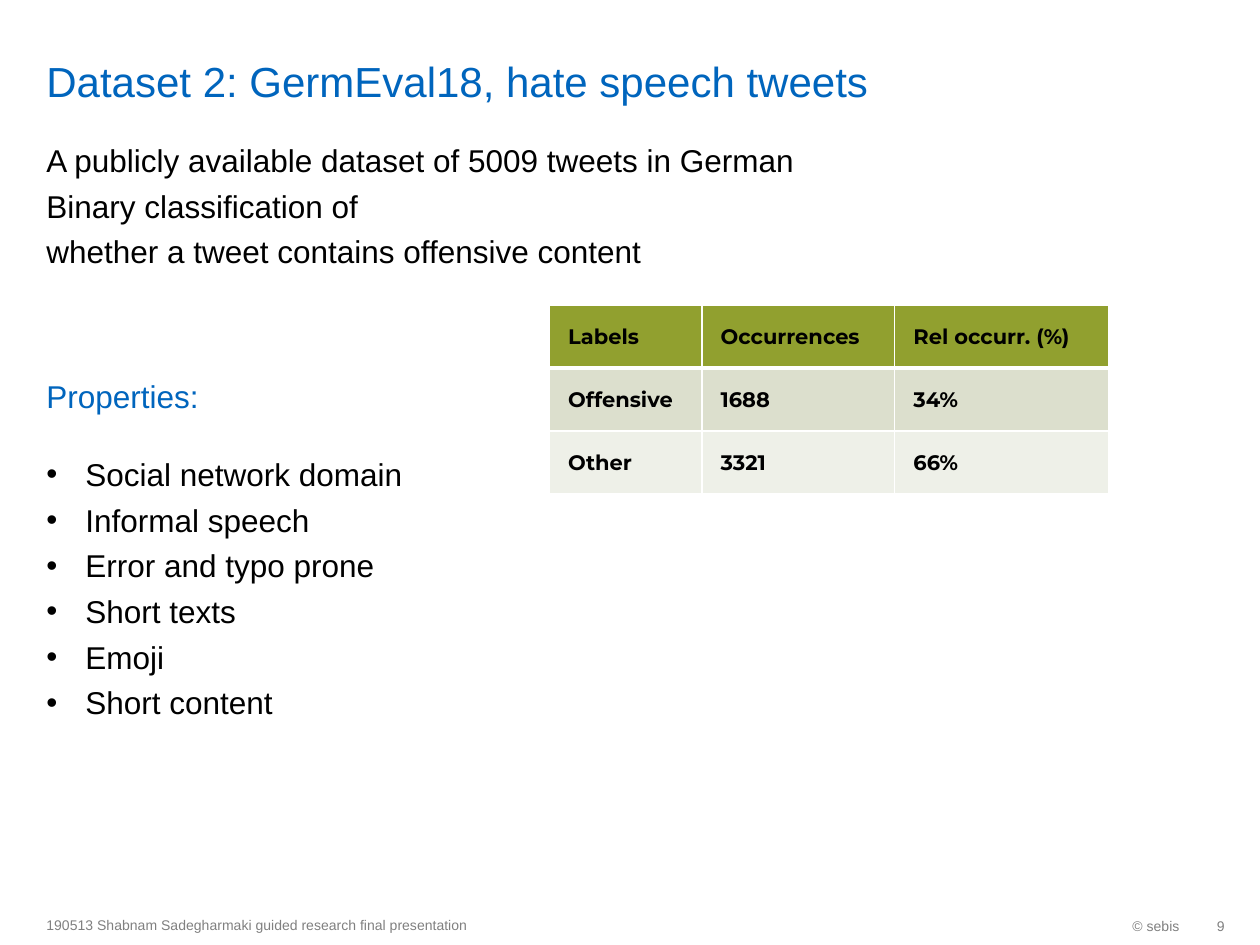
from lxml.etree import SubElement
from pptx import Presentation
from pptx.dml.color import RGBColor
from pptx.enum.text import MSO_ANCHOR, PP_ALIGN
from pptx.oxml.ns import qn
from pptx.util import Inches, Pt

COLORS = {
    "text": "000000",
    "accent": "0065BD",
    "footer": "808080",
    "header": "91A02F",
    "band_dark": "DCDFCD",
    "band_light": "EEF0E8",
    "border": "FFFFFF",
}
INTRO = [
    "A publicly available dataset of 5009 tweets in German",
    "Binary classification of",
    "whether a tweet contains offensive content",
]
PROPERTIES = [
    "Social network domain",
    "Informal speech",
    "Error and typo prone",
    "Short texts",
    "Emoji",
    "Short content",
]
ROWS = [
    ("header", ["Labels", "Occurrences", "Rel occurr. (%)"]),
    ("band_dark", ["Offensive", "1688", "34%"]),
    ("band_light", ["Other", "3321", "66%"]),
]
COLUMN_WIDTHS = [1.21, 1.53, 1.7]
LINE_GAP = 4.5
LIST_GAP = 105.5


def add_run(p, text, size, color, font="Arial", bold=False):
    """Add one formatted run to a paragraph."""
    r = p.add_run()
    r.text = text
    r.font.size = Pt(size)
    r.font.name = font
    r.font.bold = bold
    r.font.color.rgb = RGBColor.from_string(COLORS[color])


def add_frame(s, box, anchor=MSO_ANCHOR.TOP, margin=0.05, right=0.1):
    """Add a wrapping text box and return its text frame."""
    tf = s.shapes.add_textbox(*map(Inches, box)).text_frame
    tf.word_wrap = True
    tf.vertical_anchor = anchor
    tf.margin_top = tf.margin_bottom = Inches(margin)
    tf.margin_right = Inches(right)
    return tf


def add_heading(s, box, text, size):
    """Add a bottom-anchored heading."""
    tf = add_frame(s, box, MSO_ANCHOR.BOTTOM, margin=0)
    add_run(tf.paragraphs[0], text, size, "accent")


def add_footer(s, box, text, align=PP_ALIGN.LEFT, right=0.1):
    """Add a small grey footer text."""
    tf = add_frame(s, box, MSO_ANCHOR.MIDDLE, right=right)
    tf.paragraphs[0].alignment = align
    add_run(tf.paragraphs[0], text, 8, "footer")


def set_bullet(p):
    """Give a paragraph a hanging bullet."""
    pPr = p._p.get_or_add_pPr()
    pPr.set("marL", str(Inches(0.31)))
    pPr.set("indent", str(-Inches(0.31)))
    SubElement(pPr, qn("a:buFont"), typeface="Arial")
    SubElement(pPr, qn("a:buChar"), char="•")


def add_body(s):
    """Add the introduction and the bulleted properties."""
    tf = add_frame(s, (0.27, 1.07, 9.45, 5.91))
    for i, text in enumerate(INTRO + PROPERTIES):
        p = tf.add_paragraph() if i else tf.paragraphs[0]
        if i >= len(INTRO):
            set_bullet(p)
        if i:
            p.space_before = Pt(LIST_GAP if i == len(INTRO) else LINE_GAP)
        add_run(p, text, 18, "text")


def set_borders(cell, bottom):
    """Draw white cell borders with the given bottom width."""
    tcPr = cell._tc.get_or_add_tcPr()
    for tag, width in (("lnL", 1), ("lnR", 1), ("lnT", 1), ("lnB", bottom)):
        ln = SubElement(tcPr, qn(f"a:{tag}"), w=str(Pt(width)))
        fill = SubElement(ln, qn("a:solidFill"))
        SubElement(fill, qn("a:srgbClr"), val=COLORS["border"])


def add_cell(cell, text, fill, bottom):
    """Fill, border and label one table cell."""
    set_borders(cell, bottom)
    cell.fill.solid()
    cell.fill.fore_color.rgb = RGBColor.from_string(COLORS[fill])
    cell.vertical_anchor = MSO_ANCHOR.MIDDLE
    cell.margin_left = cell.margin_right = Inches(0.15)
    cell.margin_top = cell.margin_bottom = Inches(0.15)
    p = cell.text_frame.paragraphs[0]
    add_run(p, text, 12, "text", "Montserrat", True)


def add_label_table(s):
    """Add the table of label occurrences."""
    box = map(Inches, (4.36, 2.42, sum(COLUMN_WIDTHS), 1.5))
    table = s.shapes.add_table(len(ROWS), len(COLUMN_WIDTHS), *box).table
    for column, width in zip(table.columns, COLUMN_WIDTHS):
        column.width = Inches(width)
    for i, (fill, texts) in enumerate(ROWS):
        for j, text in enumerate(texts):
            cell = table.cell(i, j)
            add_cell(cell, text, fill, 1 if i else 3)
            if i == 1:
                top = cell._tc.tcPr.find(qn("a:lnT"))
                top.set("w", str(Pt(3)))


def main():
    """Build and save the slide."""
    prs = Presentation()
    prs.slide_width, prs.slide_height = Inches(10), Inches(7.5)
    s = prs.slides.add_slide(prs.slide_layouts[6])
    add_body(s)
    add_heading(s, (0.27, 0.05, 8.24, 0.79),
                "Dataset 2: GermEval18, hate speech tweets", 24)
    add_footer(s, (7.7, 7.19, 1.76, 0.32), "© sebis", PP_ALIGN.RIGHT)
    add_footer(s, (0.27, 7.18, 4.73, 0.32),
               "190513 Shabnam Sadegharmaki guided research final presentation")
    add_footer(s, (9.45, 7.19, 0.27, 0.32), "9", PP_ALIGN.RIGHT, right=0)
    add_label_table(s)
    add_heading(s, (0.27, 2.5, 2.3, 0.79), "Properties:", 18)
    prs.save("out.pptx")


if __name__ == "__main__":
    main()
